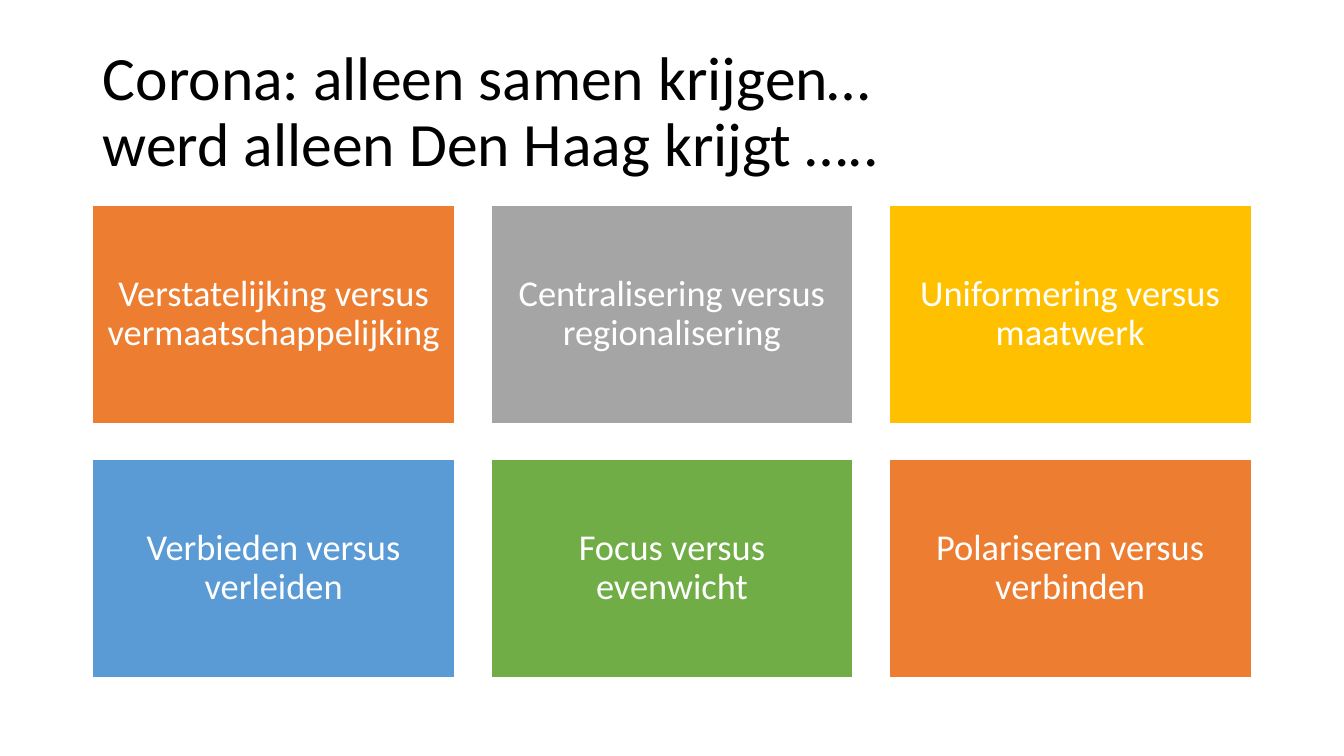
import pptx
import pptx.dml.color
import pptx.enum.shapes
import pptx.enum.text
import pptx.util

RGBColor = pptx.dml.color.RGBColor
BLACK = RGBColor(0x00, 0x00, 0x00)
WHITE = RGBColor(0xFF, 0xFF, 0xFF)
ORANGE = RGBColor(0xED, 0x7D, 0x31)
GREY = RGBColor(0xA5, 0xA5, 0xA5)
GOLD = RGBColor(0xFF, 0xC0, 0x00)
BLUE = RGBColor(0x5B, 0x9B, 0xD5)
GREEN = RGBColor(0x70, 0xAD, 0x47)

FONT = "Calibri"
EMU_PER_PX = 9144  # 100 px to the inch
SLIDE_SIZE = (1333, 750)
TITLE_BOX = (92, 40, 1150, 145)
GRID_BOX = (92, 204, 1149, 468)
COLUMNS, ROWS, GAP = 3, 2, 36
TILE_INSET = 11

HEADLINE = "Corona: alleen samen krijgen…\vwerd alleen Den Haag krijgt ….."
TENSIONS = [
    ("Verstatelijking versus vermaatschappelijking", ORANGE),
    ("Centralisering versus regionalisering", GREY),
    ("Uniformering versus maatwerk", GOLD),
    ("Verbieden versus verleiden", BLUE),
    ("Focus versus evenwicht", GREEN),
    ("Polariseren versus verbinden", ORANGE),
]


def px(length):
    return pptx.util.Emu(length * EMU_PER_PX)


def write_text(frame, text, size, color, align):
    frame.text = text
    frame.word_wrap = True
    frame.auto_size = pptx.enum.text.MSO_AUTO_SIZE.NONE
    frame.vertical_anchor = pptx.enum.text.MSO_ANCHOR.MIDDLE
    for paragraph in frame.paragraphs:
        paragraph.alignment = align
        paragraph.line_spacing = 0.9
        paragraph.space_before = pptx.util.Pt(0)
        for run in paragraph.runs:
            run.font.name = FONT
            run.font.size = pptx.util.Pt(size)
            run.font.color.rgb = color


def place_headline(slide, box):
    headline = slide.shapes.title
    headline.left, headline.top, headline.width, headline.height = map(px, box)
    write_text(headline.text_frame, HEADLINE, 44, BLACK,
               pptx.enum.text.PP_ALIGN.LEFT)


def add_tile(slide, box, text, color):
    tile = slide.shapes.add_shape(
        pptx.enum.shapes.MSO_SHAPE.RECTANGLE, *map(px, box))
    tile.shadow.inherit = False
    tile.fill.solid()
    tile.fill.fore_color.rgb = color
    tile.line.color.rgb = WHITE
    tile.line.width = pptx.util.Pt(1)
    frame = tile.text_frame
    frame.margin_left = frame.margin_right = px(TILE_INSET)
    frame.margin_top = frame.margin_bottom = px(TILE_INSET)
    write_text(frame, text, 26, WHITE, pptx.enum.text.PP_ALIGN.CENTER)


def add_tension_grid(slide, box):
    left, top, width, height = box
    tile_width = (width - (COLUMNS - 1) * GAP) // COLUMNS
    tile_height = (height - (ROWS - 1) * GAP) // ROWS
    for index, (text, color) in enumerate(TENSIONS):
        row, column = divmod(index, COLUMNS)
        tile_box = (left + column * (tile_width + GAP),
                    top + row * (tile_height + GAP),
                    tile_width, tile_height)
        add_tile(slide, tile_box, text, color)


def main():
    deck = pptx.Presentation()
    deck.slide_width, deck.slide_height = map(px, SLIDE_SIZE)
    slide = deck.slides.add_slide(deck.slide_layouts.get_by_name("Title Only"))
    slide.background.fill.solid()
    slide.background.fill.fore_color.rgb = WHITE
    place_headline(slide, TITLE_BOX)
    add_tension_grid(slide, GRID_BOX)
    deck.save("out.pptx")


if __name__ == "__main__":
    main()
